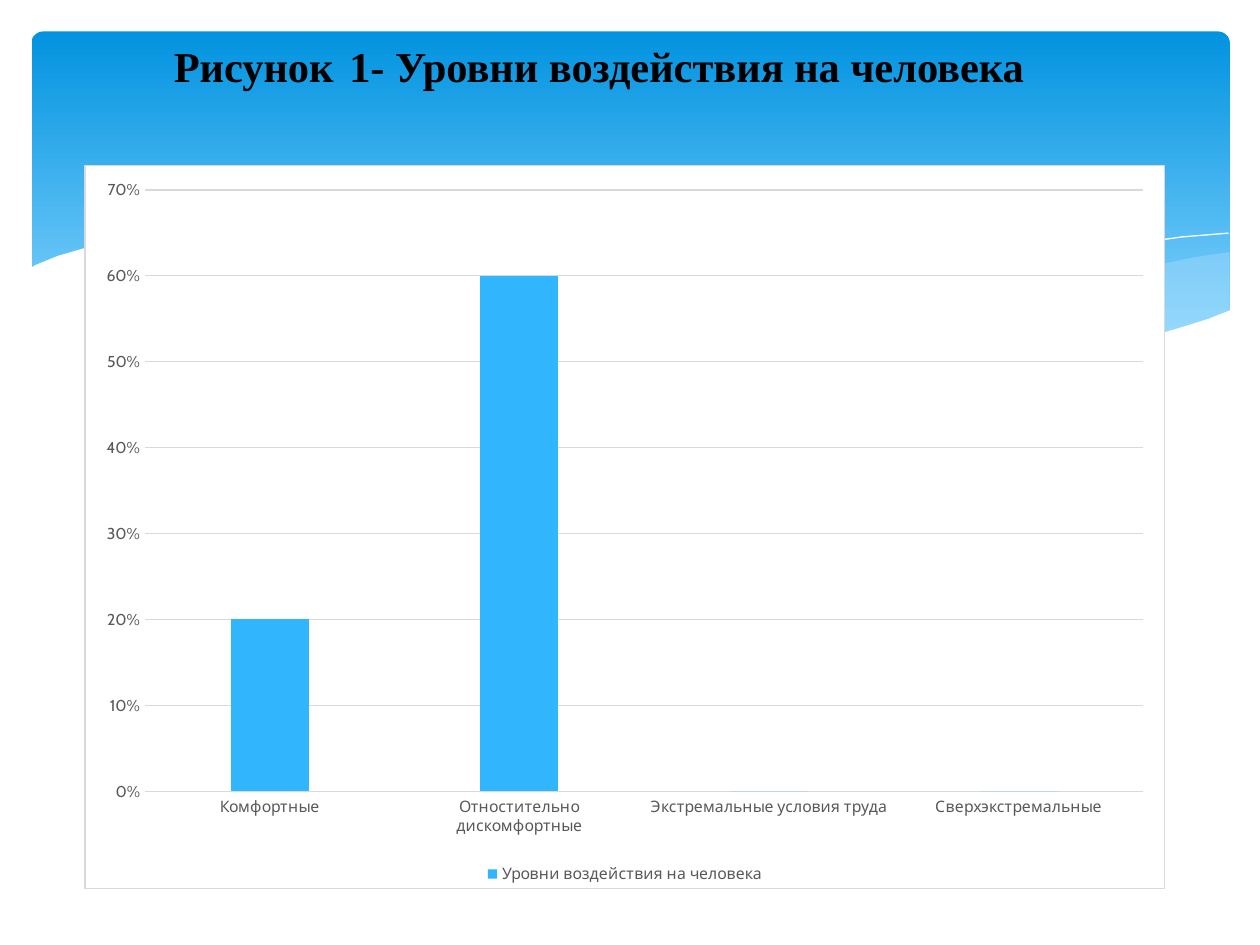
from lxml.etree import SubElement
from pptx import Presentation
from pptx.chart.data import CategoryChartData
from pptx.dml.color import RGBColor
from pptx.enum.chart import XL_CHART_TYPE as ChartType, XL_LEGEND_POSITION as LegendPos, XL_TICK_MARK as Tick
from pptx.enum.shapes import MSO_SHAPE as Shape
from pptx.enum.text import MSO_ANCHOR as Anchor, PP_ALIGN as Align
from pptx.oxml import parse_xml
from pptx.oxml.ns import nsdecls, qn
from pptx.util import Pt

GRID, LABEL, WHITE = "D9D9D9", "595959", "FFFFFF"
WAVE = [
    (703.4, 177.1), (690.5, 182.2), (676.8, 186.5), (662.4, 190.8), (647.3, 193.7),
    (621.4, 197.3), (582.5, 199.4), (535.7, 197.3), (481, 190.8), (416.9, 180),
    (321.8, 158.4), (262.8, 145.4), (210.2, 136.8), (165.6, 133.2), (127.4, 132.5),
    (95, 133.9), (68.4, 137.5), (48.2, 141.8), (33.1, 146.2), (20.9, 151.2),
    (16.6, 153.4), (16.6, 236.9), (703.4, 236.9),
]
TINT = [
    (702.7, 144), (682.6, 146.9), (652.3, 153.4), (619.9, 160.6), (560.9, 174.2),
    (508.3, 185), (475.9, 190.8), (507.6, 195.1), (545, 198.7), (586.1, 200.2),
    (621.4, 198), (651.6, 193.7), (673.2, 188.6), (702.7, 177.8),
]
CREST = [
    (441.4, 185), (500.4, 169.2), (558.7, 155.5), (601.9, 146.9),
    (644.4, 139.7), (675.4, 135.4), (702, 133.2),
]


def rgb(color):
    """Return the colour of a hex string."""
    return RGBColor.from_string(color)


def set_font(font, size, color, name="Cabin", bold=False):
    """Format a font."""
    font.size, font.name, font.bold = Pt(size), name, bold
    font.color.rgb = rgb(color)


def set_line(line, color, width):
    """Give a line its colour and width."""
    line.color.rgb = rgb(color)
    line.width = Pt(width)


def add_run(p, text, **fmt):
    """Append formatted text to a paragraph."""
    r = p.add_run()
    r.text = text
    set_font(r.font, **fmt)


def add_banner(s):
    """Add the rounded gradient banner."""
    sp = s.shapes.add_shape(Shape.ROUNDED_RECTANGLE, Pt(18), Pt(18), Pt(684.7), Pt(194.4))
    sp.adjustments[0] = 0.034
    sp.shadow.inherit = False
    sp.line.fill.background()
    sp.fill.gradient()
    sp.fill.gradient_angle = 270
    stops = [(0, "0293E0"), (0.9, "83D3FE")]
    for stop, (position, color) in zip(sp.fill.gradient_stops, stops):
        stop.position = position
        stop.color.rgb = rgb(color)


def add_outline(s, points, fill=None, alpha=None, line=None):
    """Add a closed filled outline, or an open one that has only a line."""
    (x, y), *rest = [(Pt(x), Pt(y)) for x, y in points]
    builder = s.shapes.build_freeform(x, y)
    builder.add_line_segments(rest, close=fill is not None)
    sp = builder.convert_to_shape()
    sp.shadow.inherit = False
    if fill:
        sp.fill.solid()
        sp.fill.fore_color.rgb = rgb(fill)
    else:
        sp.fill.background()
    if alpha:
        color = next(sp.element.spPr.iter(qn("a:srgbClr")))
        SubElement(color, qn("a:alpha")).set("val", str(alpha * 1000))
    if line:
        set_line(sp.line, line, 0)
    else:
        sp.line.fill.background()


def add_title(s):
    """Add the title in the upper part of its box."""
    tf = s.shapes.add_textbox(Pt(48.2), Pt(9.4), Pt(588.2), Pt(90)).text_frame
    tf.word_wrap = True
    tf.vertical_anchor = Anchor.MIDDLE
    tf.margin_top, tf.margin_bottom = 0, Pt(46)
    p = tf.paragraphs[0]
    p.alignment = Align.CENTER
    heading = dict(size=24.3, color="000000", name="Times New Roman", bold=True)
    add_run(p, "Рисунок", **heading)
    add_run(p, " ", size=39.6, color=WHITE)
    add_run(p, "1- Уровни воздействия на человека", **heading)


def frame_chart(chart):
    """Give the chart area a white fill and a grey border."""
    chart.element.find(qn("c:txPr")).addprevious(parse_xml(
        f'<c:spPr {nsdecls("c", "a")}>'
        f'<a:solidFill><a:srgbClr val="{WHITE}"/></a:solidFill>'
        f'<a:ln w="{Pt(0.75)}"><a:solidFill><a:srgbClr val="{GRID}"/></a:solidFill></a:ln>'
        '</c:spPr>'))


def add_levels_chart(s):
    """Add the column chart of exposure levels."""
    data = CategoryChartData(number_format="0%")
    data.categories = ["Комфортные", "Отностительно дискомфортные",
                       "Экстремальные условия труда", "Сверхэкстремальные"]
    data.add_series("Уровни воздействия на человека", [0.2, 0.6, 0, 0])
    chart = s.shapes.add_chart(ChartType.COLUMN_CLUSTERED, Pt(48.2), Pt(94.3),
                               Pt(617.8), Pt(414), data).chart
    set_font(chart.font, 10, "000000")
    frame_chart(chart)
    chart.has_title = False
    chart.has_legend = True
    chart.legend.position = LegendPos.BOTTOM
    chart.legend.include_in_layout = False
    set_font(chart.legend.font, 9, LABEL)

    plot = chart.plots[0]
    plot.gap_width, plot.overlap, plot.vary_by_categories = 219, -27, False
    bars = plot.series[0]
    bars.format.fill.solid()
    bars.format.fill.fore_color.rgb = rgb("31B6FD")

    cat_axis, val_axis = chart.category_axis, chart.value_axis
    for axis in (cat_axis, val_axis):
        axis.major_tick_mark = axis.minor_tick_mark = Tick.NONE
        set_font(axis.tick_labels.font, 9, LABEL)
    set_line(cat_axis.format.line, GRID, 0.75)
    val_axis.format.line.fill.background()
    set_line(val_axis.major_gridlines.format.line, GRID, 0.75)
    val_axis.minimum_scale, val_axis.maximum_scale, val_axis.major_unit = 0, 0.7, 0.1
    val_axis.tick_labels.number_format = "0%"
    val_axis.tick_labels.number_format_is_linked = False


def main():
    """Build the slide and save it."""
    prs = Presentation()
    prs.slide_width, prs.slide_height = Pt(720), Pt(540)
    s = prs.slides.add_slide(prs.slide_layouts[6])
    add_banner(s)
    add_outline(s, TINT, fill="C6E7FC", alpha=29)
    add_outline(s, CREST, line=WHITE)
    add_outline(s, WAVE, fill=WHITE)
    add_title(s)
    add_levels_chart(s)
    prs.save("out.pptx")


if __name__ == "__main__":
    main()
